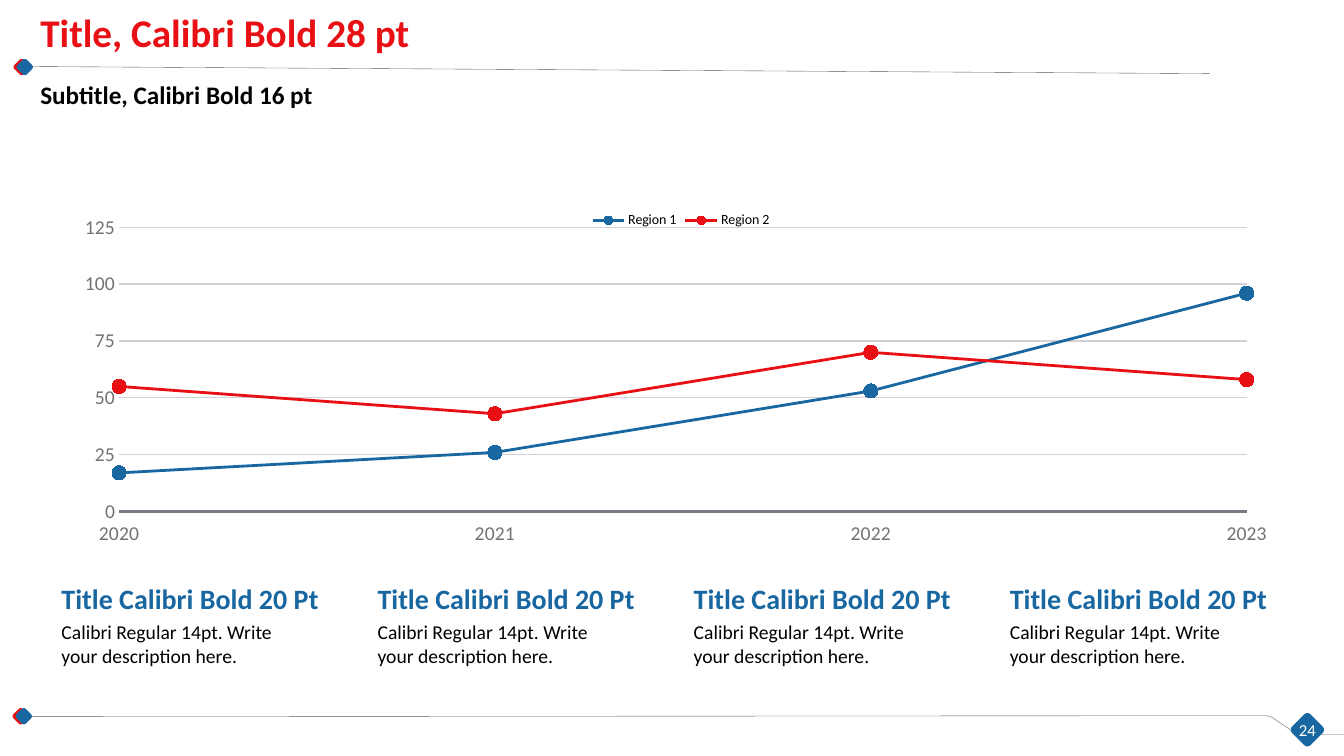
from lxml import etree
from pptx import Presentation
from pptx.chart.data import CategoryChartData
from pptx.dml.color import RGBColor
from pptx.enum import chart as ch, shapes, text
from pptx.oxml import parse_xml
from pptx.oxml.ns import nsdecls, qn
from pptx.util import Pt

RED = RGBColor(0xE8, 0x10, 0x14)
BLUE = RGBColor(0x18, 0x67, 0xA1)
BLACK = RGBColor(0, 0, 0)
WHITE = RGBColor(0xFF, 0xFF, 0xFF)
RULE = RGBColor(0x58, 0x59, 0x5B)
LABEL = RGBColor(0x76, 0x71, 0x71)
AXIS = RGBColor(0x76, 0x7A, 0x83)
GRID = RGBColor(0xD1, 0xD1, 0xD6)
FONT = "Calibri"

prs = Presentation()
prs.slide_width, prs.slide_height = Pt(960), Pt(540)
s = prs.slides.add_slide(prs.slide_layouts[1])


def write(sp, words, size, color=BLACK, bold=False, align=text.PP_ALIGN.LEFT,
          anchor=text.MSO_ANCHOR.TOP, spacing=1.0, inset=None):
    """Fill a text shape with one formatted paragraph."""
    tf = sp.text_frame
    tf.word_wrap = True
    tf.auto_size = text.MSO_AUTO_SIZE.NONE
    tf.vertical_anchor = anchor
    if inset is not None:
        tf.margin_left = tf.margin_right = tf.margin_top = tf.margin_bottom = Pt(inset)
    p = tf.paragraphs[0]
    p.alignment, p.line_spacing, p.space_before = align, spacing, Pt(0)
    r = p.add_run()
    r.text = words
    r.font.name, r.font.size, r.font.bold = FONT, Pt(size), bold
    r.font.color.rgb = color


def diamond(left, top, size, color, corner):
    sp = s.shapes.add_shape(shapes.MSO_SHAPE.ROUNDED_RECTANGLE,
                            Pt(left), Pt(top), Pt(size), Pt(size))
    sp.adjustments[0] = corner
    sp.rotation = 45
    sp.shadow.inherit = False
    sp.fill.solid()
    sp.fill.fore_color.rgb = color
    sp.line.fill.background()


# Footer rule: straight runs joined by two rounded bends
bends = [((930.2, 524.9), (928.1, 524.9), (925.9, 524.2), (923.8, 522.7)),
         ((910.1, 513.4), (908.6, 512), (905.8, 511.2), (903.6, 511.2))]
points = []
for a, b, c, d in bends:
    for t in (0, 0.25, 0.5, 0.75, 1):
        points.append(tuple((1 - t) ** 3 * a[i] + 3 * (1 - t) ** 2 * t * b[i]
                            + 3 * (1 - t) * t ** 2 * c[i] + t ** 3 * d[i] for i in (0, 1)))
points.append((17.3, 511.9))
fb = s.shapes.build_freeform(Pt(960), Pt(524.9))
fb.add_line_segments([(Pt(x), Pt(y)) for x, y in points], close=False)
footer = fb.convert_to_shape()
footer.shadow.inherit = False
footer.fill.background()

header = s.shapes.add_connector(shapes.MSO_CONNECTOR.STRAIGHT,
                                Pt(16.6), Pt(47.5), Pt(864), Pt(52.6))
etree.SubElement(header._element.spPr, qn("a:effectLst"))
for rule in (footer, header):
    rule.line.color.rgb = RULE
    rule.line.width = Pt(0.25)

diamond(924.5, 511.9, 18.7, BLUE, 0.167)
for left, top in ((10.1, 506.9), (10.8, 43.2)):
    diamond(left, top, 9.4, RED, 0.222)
    diamond(left + 2.2, top, 9.4, BLUE, 0.222)

# Title and subtitle
title, subtitle = s.shapes.title, s.placeholders[1]
for sp, top, height in ((title, 2.9, 41), (subtitle, 55.4, 24.5)):
    sp.left, sp.top, sp.width, sp.height = Pt(21.6), Pt(top), Pt(872.6), Pt(height)
write(title, "Title, Calibri Bold 28 pt", 28, RED, True,
      anchor=text.MSO_ANCHOR.BOTTOM, spacing=0.9)
pPr = subtitle.text_frame.paragraphs[0]._p.get_or_add_pPr()
pPr.set("marL", "0")
pPr.set("indent", "0")
etree.SubElement(pPr, qn("a:buNone"))
write(subtitle, "Subtitle, Calibri Bold 16 pt", 18, bold=True, spacing=0.9)

number = s.shapes.add_textbox(Pt(917.3), Pt(510.5), Pt(33.1), Pt(13.7))
write(number, "24", 12, WHITE, align=text.PP_ALIGN.CENTER)

# Line chart
data = CategoryChartData()
data.categories = ["2020", "2021", "2022", "2023"]
data.add_series("Region 1", (17, 26, 53, 96))
data.add_series("Region 2", (55, 43, 70, 58))
chart = s.shapes.add_chart(ch.XL_CHART_TYPE.LINE_MARKERS, Pt(55.4), Pt(141.1),
                           Pt(849.6), Pt(258.5), data).chart
chart.has_title = False
chart.font.name, chart.font.size = FONT, Pt(10)
chart.font.color.rgb = BLACK
chart.plots[0].vary_by_categories = False
for series, color in zip(chart.series, (BLUE, RED)):
    series.smooth = False
    series.format.line.color.rgb = color
    series.format.line.width = Pt(2)
    series.marker.style, series.marker.size = ch.XL_MARKER_STYLE.CIRCLE, 10
    series.marker.format.fill.solid()
    series.marker.format.fill.fore_color.rgb = color
    series.marker.format.line.color.rgb = color

years, values = chart.category_axis, chart.value_axis
for axis in (years, values):
    axis.major_tick_mark = axis.minor_tick_mark = ch.XL_TICK_MARK.NONE
    axis.tick_labels.font.name, axis.tick_labels.font.size = FONT, Pt(14)
    axis.tick_labels.font.color.rgb = LABEL
years.tick_label_position = ch.XL_TICK_LABEL_POSITION.LOW
years.format.line.color.rgb = AXIS
years.format.line.width = Pt(2)
values.format.line.fill.background()
values.minimum_scale, values.maximum_scale, values.major_unit = 0, 125, 25
values.has_major_gridlines = True
values.major_gridlines.format.line.color.rgb = GRID
values.major_gridlines.format.line.width = Pt(1)

# Lines start on the value axis
for old in values._element.findall(qn("c:crossBetween")):
    values._element.remove(old)
values._element.find(qn("c:crosses")).addnext(
    parse_xml(f'<c:crossBetween {nsdecls("c")} val="midCat"/>'))

chart.has_legend = True
legend = chart.legend
legend.position = ch.XL_LEGEND_POSITION.TOP
legend.include_in_layout = False
legend.font.name, legend.font.size = FONT, Pt(10)
legend.font.color.rgb = BLACK

plot_area = chart._chartSpace.find(".//" + qn("c:plotArea"))
layouts = [
    (plot_area, 0, dict(layoutTarget="inner", xMode="edge", yMode="edge",
                        x=0.035, y=0.082, w=0.95, h=0.786)),
    (legend._element, 1, dict(xMode="edge", yMode="edge", x=0.43, y=0.03)),
]
for parent, index, settings in layouts:
    for old in parent.findall(qn("c:layout")):
        parent.remove(old)
    layout = parse_xml(f'<c:layout {nsdecls("c")}><c:manualLayout/></c:layout>')
    for name, value in settings.items():
        etree.SubElement(layout[0], qn(f"c:{name}")).set("val", str(value))
    parent.insert(index, layout)

# Four captions under the chart
for column in range(4):
    left = 43.9 + 225.8 * column
    heading = s.shapes.add_textbox(Pt(left), Pt(415.4), Pt(193.7), Pt(24.5))
    write(heading, "Title Calibri Bold 20 Pt", 20, BLUE, True, inset=0)
    description = s.shapes.add_textbox(Pt(left), Pt(442.8), Pt(173.5), Pt(33.8))
    write(description, "Calibri Regular 14pt. Write your description here.", 14, inset=0)

prs.save("out.pptx")
